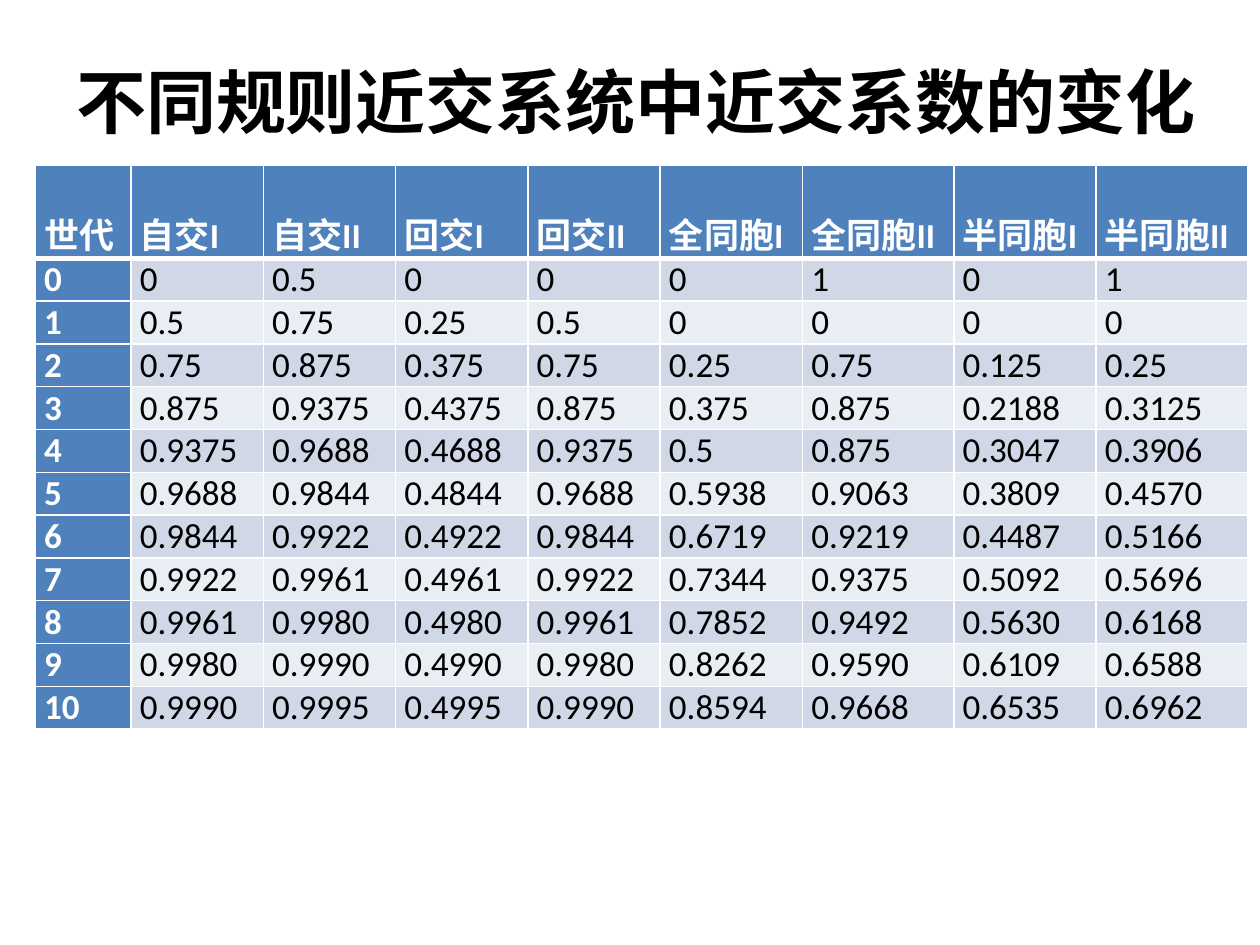
from dataclasses import dataclass

from lxml import etree
from pptx import Presentation
from pptx.dml.color import RGBColor
from pptx.enum.text import MSO_ANCHOR, PP_ALIGN
from pptx.oxml.ns import qn
from pptx.util import Inches, Pt

CENTER, JUSTIFY, LEFT = PP_ALIGN.CENTER, PP_ALIGN.JUSTIFY, PP_ALIGN.LEFT
MIDDLE, BOTTOM = MSO_ANCHOR.MIDDLE, MSO_ANCHOR.BOTTOM

TITLE = "不同规则近交系统中近交系数的变化"
HEADERS = ["世代", "自交I", "自交II", "回交I", "回交II",
           "全同胞I", "全同胞II", "半同胞I", "半同胞II"]
GENERATIONS = """
0 0 0.5 0 0 0 1 0 1
1 0.5 0.75 0.25 0.5 0 0 0 0
2 0.75 0.875 0.375 0.75 0.25 0.75 0.125 0.25
3 0.875 0.9375 0.4375 0.875 0.375 0.875 0.2188 0.3125
4 0.9375 0.9688 0.4688 0.9375 0.5 0.875 0.3047 0.3906
5 0.9688 0.9844 0.4844 0.9688 0.5938 0.9063 0.3809 0.4570
6 0.9844 0.9922 0.4922 0.9844 0.6719 0.9219 0.4487 0.5166
7 0.9922 0.9961 0.4961 0.9922 0.7344 0.9375 0.5092 0.5696
8 0.9961 0.9980 0.4980 0.9961 0.7852 0.9492 0.5630 0.6168
9 0.9980 0.9990 0.4990 0.9980 0.8262 0.9590 0.6109 0.6588
10 0.9990 0.9995 0.4995 0.9990 0.8594 0.9668 0.6535 0.6962
"""
COL_WIDTHS = [0.76] + [1.05] * 4 + [1.13, 1.2] * 2
HEADER_HEIGHT, ROW_HEIGHT = 0.74, 0.34


@dataclass(frozen=True)
class Theme:
    title_font: str = "Times New Roman"
    table_font: str = "Calibri"
    title_size: int = 40
    table_size: int = 20
    text: str = "000000"
    white: str = "FFFFFF"
    accent: str = "4F81BD"
    bands: tuple = ("D0D8E8", "E9EDF4")
    thin: int = 1
    thick: int = 3


class SlideBuilder:
    def __init__(self, prs, theme):
        self.theme = theme
        self.s = prs.slides.add_slide(prs.slide_layouts[6])

    def style(self, p, font, size, color, bold, align):
        p.alignment = align
        for r in p.runs:
            r.font.name = font
            r.font.size = Pt(size)
            r.font.bold = bold
            r.font.color.rgb = RGBColor.from_string(color)

    def title(self, text, left, top, width, height):
        sp = self.s.shapes.add_textbox(Inches(left), Inches(top),
                                       Inches(width), Inches(height))
        tf = sp.text_frame
        tf.word_wrap = True
        tf.vertical_anchor = MIDDLE
        tf.text = text
        self.style(tf.paragraphs[0], self.theme.title_font,
                   self.theme.title_size, self.theme.text, True, CENTER)

    def borders(self, cell, top, bottom):
        tc_pr = cell._tc.get_or_add_tcPr()
        thin = self.theme.thin
        for side, width in zip("LRTB", (thin, thin, top, bottom)):
            ln = etree.SubElement(tc_pr, qn(f"a:ln{side}"), w=str(Pt(width)))
            fill = etree.SubElement(ln, qn("a:solidFill"))
            etree.SubElement(fill, qn("a:srgbClr"), val=self.theme.white)

    def cell(self, cell, text, row, col):
        t = self.theme
        heading = row == 0 or col == 0
        cell.margin_left = cell.margin_right = Inches(0.07)
        cell.margin_top = cell.margin_bottom = 0
        cell.vertical_anchor = BOTTOM
        self.borders(cell, t.thick if row == 1 else t.thin,
                     t.thick if row == 0 else t.thin)
        cell.fill.solid()
        cell.fill.fore_color.rgb = RGBColor.from_string(
            t.accent if heading else t.bands[(row - 1) % 2])
        cell.text_frame.text = text
        self.style(cell.text_frame.paragraphs[0], t.table_font, t.table_size,
                   t.white if heading else t.text, heading,
                   JUSTIFY if row == 0 else LEFT)

    def table(self, rows, left, top, col_widths, row_heights):
        table = self.s.shapes.add_table(
            len(rows), len(col_widths), Inches(left), Inches(top),
            Inches(sum(col_widths)), Inches(sum(row_heights))).table
        table.first_col = True
        for column, width in zip(table.columns, col_widths):
            column.width = Inches(width)
        for row, height in zip(table.rows, row_heights):
            row.height = Inches(height)
        for i, values in enumerate(rows):
            for j, value in enumerate(values):
                self.cell(table.cell(i, j), value, i, j)


def main():
    prs = Presentation()
    prs.slide_width, prs.slide_height = Inches(10), Inches(7.5)
    rows = [HEADERS] + [line.split() for line in GENERATIONS.strip().splitlines()]
    heights = [HEADER_HEIGHT] + [ROW_HEIGHT] * (len(rows) - 1)
    slide = SlideBuilder(prs, Theme())
    slide.title(TITLE, 0.28, 0.36, 9.53, 0.87)
    slide.table(rows, 0.28, 1.31, COL_WIDTHS, heights)
    prs.save("out.pptx")


if __name__ == "__main__":
    main()
